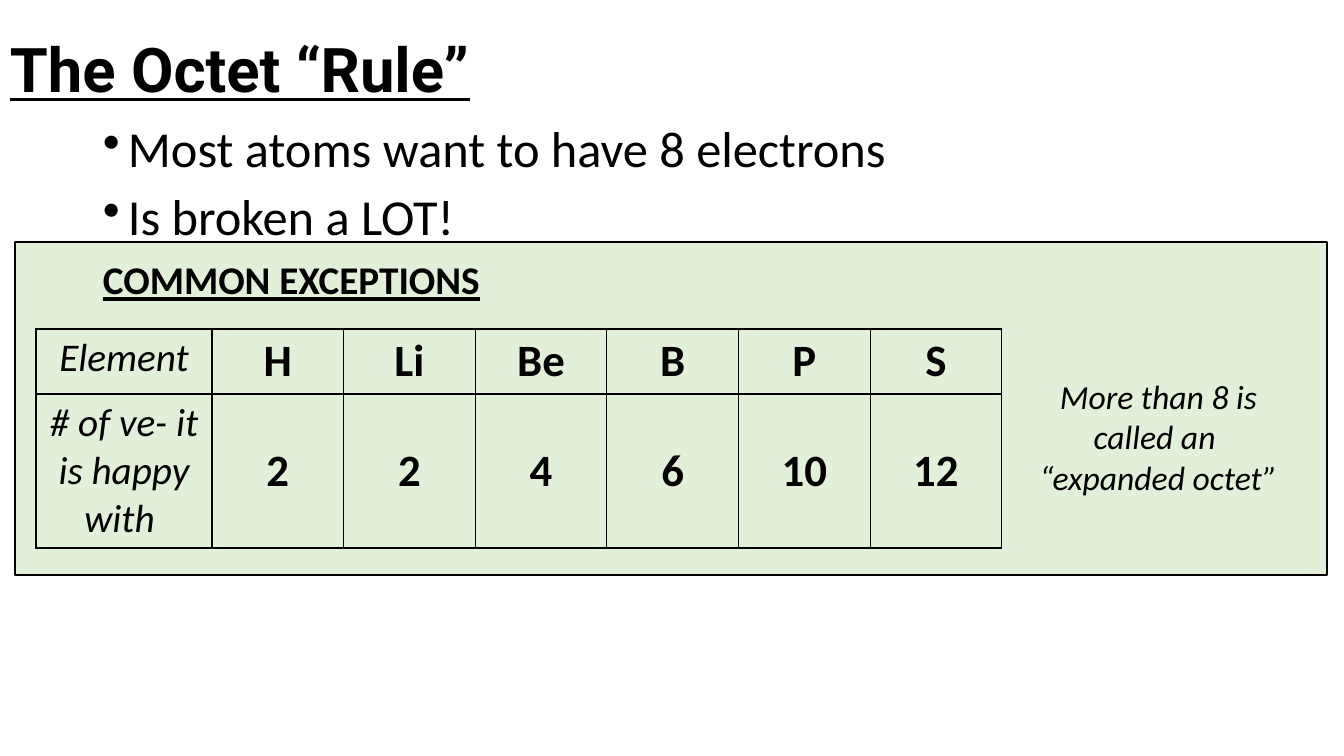
from lxml import etree
from pptx import Presentation
from pptx.dml.color import RGBColor
from pptx.enum.shapes import MSO_SHAPE
from pptx.enum.text import MSO_ANCHOR, PP_ALIGN
from pptx.oxml.ns import qn
from pptx.util import Emu, Pt

RECTANGLE = MSO_SHAPE.RECTANGLE
TOP, MIDDLE = MSO_ANCHOR.TOP, MSO_ANCHOR.MIDDLE
LEFT, CENTER = PP_ALIGN.LEFT, PP_ALIGN.CENTER
EMU_PER_PX = 914400 / 100.8


class Theme:
    ink = RGBColor(0x00, 0x00, 0x00)
    panel = RGBColor(0xE2, 0xF0, 0xD9)
    heading_font, body_font = "Roboto", "Calibri"
    title, bullet, value, label, note = 44, 36, 32, 28, 24
    line = 1


ELEMENTS = ["H", "Li", "Be", "B", "P", "S"]
ELECTRONS = ["2", "2", "4", "6", "10", "12"]


def px(length):
    return Emu(round(length * EMU_PER_PX))


def add_box(slide, box, anchor=TOP):
    frame = slide.shapes.add_textbox(*map(px, box)).text_frame
    frame.word_wrap = True
    frame.vertical_anchor = anchor
    return frame


def write(paragraph, text, size, align=LEFT, font=Theme.body_font,
          bold=False, italic=False, underline=False):
    paragraph.text = text
    paragraph.alignment = align
    style = paragraph.font
    style.name, style.size = font, Pt(size)
    style.color.rgb = Theme.ink
    style.bold, style.italic, style.underline = bold, italic, underline


def add_bullet(paragraph, indent):
    properties = paragraph._p.get_or_add_pPr()
    properties.set("marL", str(px(indent)))
    properties.set("indent", str(-px(indent)))
    bullet = etree.Element(qn("a:buChar"), char="•")
    properties.find(qn("a:defRPr")).addprevious(bullet)


def add_borders(cell):
    properties = cell._tc.get_or_add_tcPr()
    for side in ("a:lnL", "a:lnR", "a:lnT", "a:lnB"):
        border = etree.SubElement(properties, qn(side), w=str(Pt(Theme.line)))
        fill = etree.SubElement(border, qn("a:solidFill"))
        etree.SubElement(fill, qn("a:srgbClr"), val=str(Theme.ink))


def add_title(slide, box):
    heading = add_box(slide, box, MIDDLE).paragraphs[0]
    write(heading, "The Octet “Rule”", Theme.title, font=Theme.heading_font,
          bold=True, underline=True)
    heading.line_spacing = 0.9


def add_panel(slide, box):
    panel = slide.shapes.add_shape(RECTANGLE, *map(px, box))
    panel.shadow.inherit = False
    panel.fill.solid()
    panel.fill.fore_color.rgb = Theme.panel
    panel.line.color.rgb = Theme.ink
    panel.line.width = Pt(Theme.line)


def add_rule_points(slide, box):
    frame = add_box(slide, box)
    points = frame.paragraphs[0], frame.add_paragraph()
    for point, text in zip(points, ("Most atoms want to have 8 electrons",
                                    "Is broken a LOT!")):
        write(point, text, Theme.bullet)
        add_bullet(point, 25)
    write(frame.add_paragraph(), "COMMON EXCEPTIONS", Theme.label,
          bold=True, underline=True)
    for paragraph in frame.paragraphs:
        paragraph.line_spacing = 0.9
        paragraph.space_before = Pt(10)


def add_exceptions_table(slide, box):
    left, top, width, height = box
    label_width, header_height = 176, 65
    rows = [["Element", *ELEMENTS],
            ["# of ve- it is happy with ", *ELECTRONS]]
    table = slide.shapes.add_table(len(rows), len(rows[0]),
                                   *map(px, box)).table
    table.first_row = table.horz_banding = False

    # Label column, then equal element columns
    element_width = (width - label_width) / len(ELEMENTS)
    for index, column in enumerate(table.columns):
        column.width = px(element_width if index else label_width)
    table.rows[0].height = px(header_height)
    table.rows[1].height = px(height - header_height)

    for r, row in enumerate(rows):
        for c, text in enumerate(row):
            cell = table.cell(r, c)
            is_value = c > 0
            cell.vertical_anchor = MIDDLE if r and is_value else TOP
            write(cell.text_frame.paragraphs[0], text,
                  Theme.value if is_value else Theme.label, CENTER,
                  bold=is_value, italic=not is_value)
            add_borders(cell)
            cell.fill.background()


def add_octet_note(slide, box):
    note = add_box(slide, box).paragraphs[0]
    write(note, "More than 8 is called an \v“expanded octet”", Theme.note,
          CENTER, italic=True)


def main():
    deck = Presentation()
    deck.slide_width, deck.slide_height = px(1344), px(756)
    slide = deck.slides.add_slide(deck.slide_layouts[6])

    add_title(slide, (0, 0, 1344, 146))
    add_panel(slide, (15, 242, 1312, 333))
    add_rule_points(slide, (93, 119, 1159, 537))
    add_exceptions_table(slide, (36, 329, 966, 219))
    add_octet_note(slide, (1010, 371, 297, 132))

    deck.save("out.pptx")


if __name__ == "__main__":
    main()
